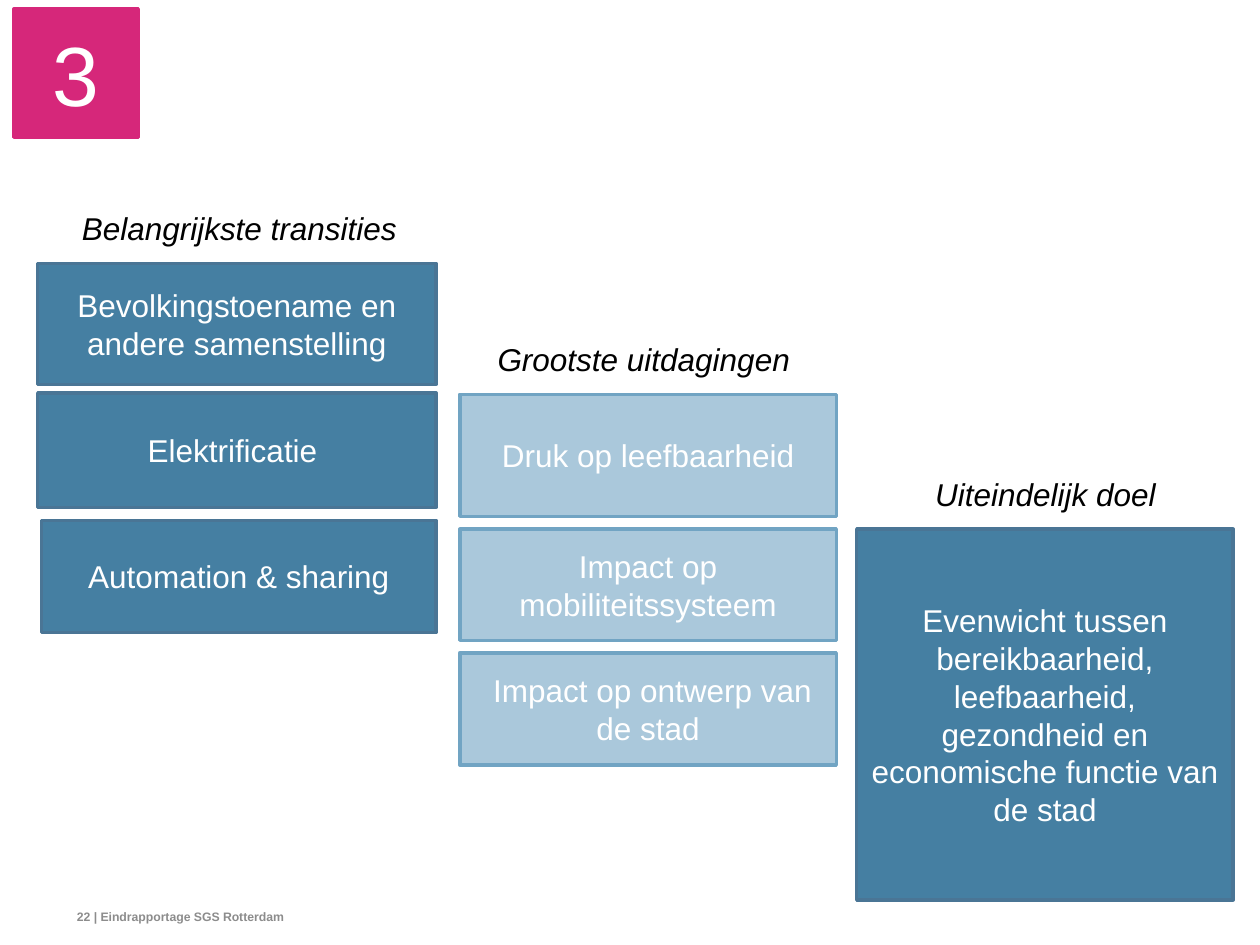
import pptx
import pptx.util
import pptx.dml.color
import pptx.enum.shapes
import pptx.enum.text
from pptx.util import Cm, Pt

ALIGN = pptx.enum.text.PP_ALIGN
ANCHOR = pptx.enum.text.MSO_ANCHOR

COLORS = {
    "blue": "457FA2", "blue_line": "4A7595",
    "light": "AAC8DB", "light_line": "71A4C3",
    "pink": "D6277A", "pink_line": "D6277A",
    "white": "FFFFFF", "black": "000000", "grey": "8C8C8C",
}

# Content, lengths in cm: heading (text, left, top, width, alignment),
# right edge of the column, boxes (text, left, top, height)
COLUMNS = [
    {"heading": ("Belangrijkste transities", 1.4, 4.09, 7.29, ALIGN.LEFT),
     "color": "blue", "right": 8.79,
     "boxes": [("Bevolkingstoename en andere samenstelling", 0.76, 5.31, 2.44),
               ("Elektrificatie ", 0.76, 7.92, 2.31),
               ("Automation & sharing", 0.84, 10.49, 2.26)]},
    {"heading": ("Grootste uitdagingen", 9.78, 6.73, 6.53, ALIGN.LEFT),
     "color": "light", "right": 16.86,
     "boxes": [("Druk op leefbaarheid", 9.27, 7.95, 2.46),
               ("Impact op mobiliteitssysteem", 9.27, 10.67, 2.24),
               (" Impact op ontwerp van de stad", 9.27, 13.16, 2.26)]},
    {"heading": ("Uiteindelijk doel", 17.81, 9.45, 6.53, ALIGN.CENTER),
     "color": "blue", "right": 24.86,
     "boxes": [("Evenwicht tussen bereikbaarheid, leefbaarheid, gezondheid "
                "en economische functie van de stad", 17.27, 10.67, 7.47)]},
]
CHAPTER = "3"
FOOTER = "22 | Eindrapportage SGS Rotterdam"
HEADING_HEIGHT = 1.02


def rgb(name):
    return pptx.dml.color.RGBColor.from_string(COLORS[name])


def write(sp, text, color, align, frame=None, **font):
    tf = sp.text_frame
    for key, value in {"word_wrap": True, **(frame or {})}.items():
        setattr(tf, key, value)
    p = tf.paragraphs[0]
    p.alignment = align
    r = p.add_run()
    r.text = text
    r.font.color.rgb = rgb(color)
    for key, value in {"name": "Arial", "size": Pt(18), **font}.items():
        setattr(r.font, key, value)


def add_box(slide, text, color, place, **font):
    sp = slide.shapes.add_shape(pptx.enum.shapes.MSO_SHAPE.RECTANGLE,
                                *map(Cm, place))
    sp.shadow.inherit = False
    sp.fill.solid()
    sp.fill.fore_color.rgb = rgb(color)
    sp.line.color.rgb = rgb(color + "_line")
    sp.line.width = Pt(2)
    write(sp, text, "white", ALIGN.CENTER,
          {"vertical_anchor": ANCHOR.MIDDLE}, **font)


def add_text(slide, text, color, place, align, frame=None, **font):
    sp = slide.shapes.add_textbox(*map(Cm, place))
    write(sp, text, color, align, frame, **font)


def main():
    prs = pptx.Presentation()
    prs.slide_width, prs.slide_height = Cm(25.4), Cm(19.05)
    slide = prs.slides.add_slide(prs.slide_layouts[6])

    # Footer
    frame = {"word_wrap": False, "vertical_anchor": ANCHOR.BOTTOM}
    frame.update({f"margin_{side}": 0
                  for side in ("left", "top", "right", "bottom")})
    add_text(slide, FOOTER, "grey", (1.55, 18.14, 11.99, 0.48), ALIGN.LEFT,
             frame, size=Pt(7), bold=True)

    # Columns with their headings
    for column in COLUMNS:
        for text, left, top, height in column["boxes"]:
            add_box(slide, text, column["color"],
                    (left, top, column["right"] - left, height))
        text, left, top, width, align = column["heading"]
        add_text(slide, text, "black", (left, top, width, HEADING_HEIGHT),
                 align, italic=True)

    # Chapter number
    add_box(slide, CHAPTER, "pink", (0.28, 0.18, 2.51, 2.59), size=Pt(48))

    prs.save("out.pptx")


if __name__ == "__main__":
    main()
